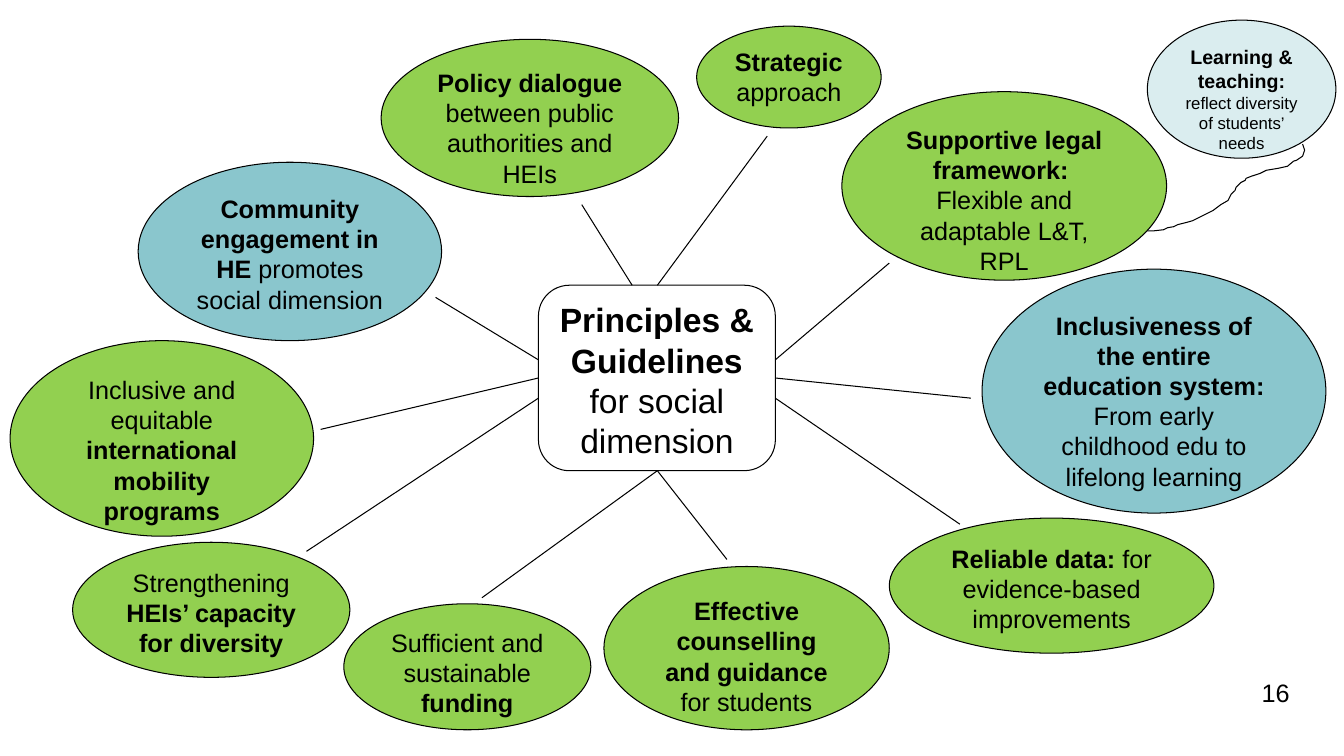
from lxml import etree
from pptx import Presentation
from pptx.dml.color import RGBColor
from pptx.enum.shapes import MSO_CONNECTOR, MSO_SHAPE
from pptx.enum.text import MSO_ANCHOR, PP_ALIGN
from pptx.oxml.ns import qn
from pptx.util import Pt

ELLIPSE = MSO_SHAPE.OVAL
ROUNDED = MSO_SHAPE.ROUNDED_RECTANGLE
STRAIGHT = MSO_CONNECTOR.STRAIGHT
TOP = MSO_ANCHOR.TOP
CENTER, RIGHT = PP_ALIGN.CENTER, PP_ALIGN.RIGHT

PX = 9144  # EMU per px, 100 px to the inch
SLIDE_SIZE = (1333, 750)
FONT = "Arial"
COLORS = {"ink": "000000", "green": "92D050", "teal": "8AC6CD", "pale": "DAEDEF"}

# Text between asterisks is bold; each string is one paragraph.
HUB_BOX = (534, 283, 235, 184)
HUB_TEXT = ["*Principles & Guidelines *for social dimension"]

PRINCIPLES = [
    ((691, 26, 183, 101), "green", ["*Strategic* approach"]),
    ((835, 91, 322, 187), "green",
     ["*Supportive legal framework: *", "Flexible and adaptable L&T, RPL"]),
    ((974, 267, 341, 242), "teal",
     ["*Inclusiveness of the entire education system:*",
      "From early childhood edu to lifelong learning"]),
    ((882, 514, 322, 134), "green", ["*Reliable data: *for evidence-based improvements"]),
    ((599, 562, 283, 162), "green", ["*Effective counselling and guidance *for students"]),
    ((341, 599, 245, 125), "green", ["Sufficient and sustainable *funding*"]),
    ((72, 538, 275, 134), "green", ["Strengthening *HEIs’ capacity for diversity*"]),
    ((10, 338, 301, 194), "green",
     ["Inclusive and equitable *international mobility programs*"]),
    ((137, 161, 301, 177), "teal", ["*Community engagement in HE *promotes social dimension"]),
    ((378, 39, 295, 156), "green", ["*Policy dialogue *between public authorities and HEIs"]),
]

# Hub side, offset from the middle of that side, outer end of the spoke
SPOKES = [
    ("top", -25, (577, 203)), ("top", 0, (761, 135)),
    ("right", -18, (882, 261)), ("right", 0, (963, 395)), ("right", 20, (952, 520)),
    ("bottom", 0, (721, 555)), ("bottom", 0, (478, 593)),
    ("left", 20, (304, 547)), ("left", 0, (318, 426)), ("left", -18, (432, 295)),
]

NOTE_BOX = (1138, 20, 187, 137)
NOTE_TEXT = ["*Learning & teaching: *reflect diversity of students’ needs"]
NOTE_TAIL = [
    (1138, 229), (1145, 229), (1154, 228), (1158, 226), (1164, 225), (1168, 223),
    (1176, 221), (1183, 219), (1191, 215), (1199, 211), (1203, 209), (1211, 203),
    (1218, 199), (1221, 193), (1225, 189), (1226, 186), (1231, 181), (1235, 179),
    (1236, 177), (1241, 175), (1250, 172), (1256, 169), (1268, 167), (1277, 165),
    (1283, 160), (1286, 159), (1292, 155), (1294, 149), (1292, 143),
]

NUMBER_BOX = (1011, 667, 278, 50)


def color(name):
    return RGBColor.from_string(COLORS[name])


def emu(lengths):
    return [length * PX for length in lengths]


def set_format(target, values):
    for name, value in values.items():
        setattr(target, name, value)


def outline(shape):
    shape.line.color.rgb = color("ink")
    shape.line.width = Pt(0.75)


def write_text(shape, texts, bold_size, plain_size, alignment=CENTER):
    frame = shape.text_frame
    set_format(frame, {"word_wrap": True, "vertical_anchor": TOP})
    for index, text in enumerate(texts):
        paragraph = frame.paragraphs[0] if index == 0 else frame.add_paragraph()
        paragraph.alignment = alignment
        for part, words in enumerate(text.split("*")):
            if not words:
                continue
            bold = part % 2 == 1
            run = paragraph.add_run()
            run.text = words
            set_format(run.font, {"name": FONT, "bold": bold,
                                  "size": Pt(bold_size if bold else plain_size)})
            run.font.color.rgb = color("ink")


def add_bubble(slide, kind, box, fill, texts, bold_size=18, plain_size=18):
    shape = slide.shapes.add_shape(kind, *emu(box))
    shape.shadow.inherit = False
    if fill:
        shape.fill.solid()
        shape.fill.fore_color.rgb = color(fill)
    else:
        shape.fill.background()
    outline(shape)
    write_text(shape, texts, bold_size, plain_size)


def add_spokes(slide, box):
    left, top, width, height = box
    middle_x, middle_y = left + width // 2, top + height // 2
    for side, offset, end in SPOKES:
        start = {
            "top": (middle_x + 1 + offset, top),
            "bottom": (middle_x + 1 + offset, top + height),
            "left": (left, middle_y + offset),
            "right": (left + width, middle_y + offset),
        }[side]
        spoke = slide.shapes.add_connector(STRAIGHT, *emu(start + end))
        outline(spoke)
        etree.SubElement(spoke._element.spPr, qn("a:effectLst"))


def add_note(slide, box):
    add_bubble(slide, ELLIPSE, box, "pale", NOTE_TEXT, 14, 12)
    builder = slide.shapes.build_freeform(*NOTE_TAIL[0], scale=PX)
    builder.add_line_segments(NOTE_TAIL[1:], close=False)
    tail = builder.convert_to_shape()
    tail.shadow.inherit = False
    tail.fill.background()
    outline(tail)


def add_page_number(slide, box):
    number = slide.shapes.add_textbox(*emu(box))
    write_text(number, ["16"], 18, 18, RIGHT)


def build_mind_map(slide):
    add_page_number(slide, NUMBER_BOX)
    # Hub and the ten principles around it
    add_bubble(slide, ROUNDED, HUB_BOX, None, HUB_TEXT, 24, 24)
    for box, fill, texts in PRINCIPLES:
        add_bubble(slide, ELLIPSE, box, fill, texts)
    add_spokes(slide, HUB_BOX)
    # Side note with its curved tail
    add_note(slide, NOTE_BOX)


def main():
    presentation = Presentation()
    presentation.slide_width, presentation.slide_height = emu(SLIDE_SIZE)
    slide = presentation.slides.add_slide(presentation.slide_layouts[6])
    build_mind_map(slide)
    presentation.save("out.pptx")


if __name__ == "__main__":
    main()
